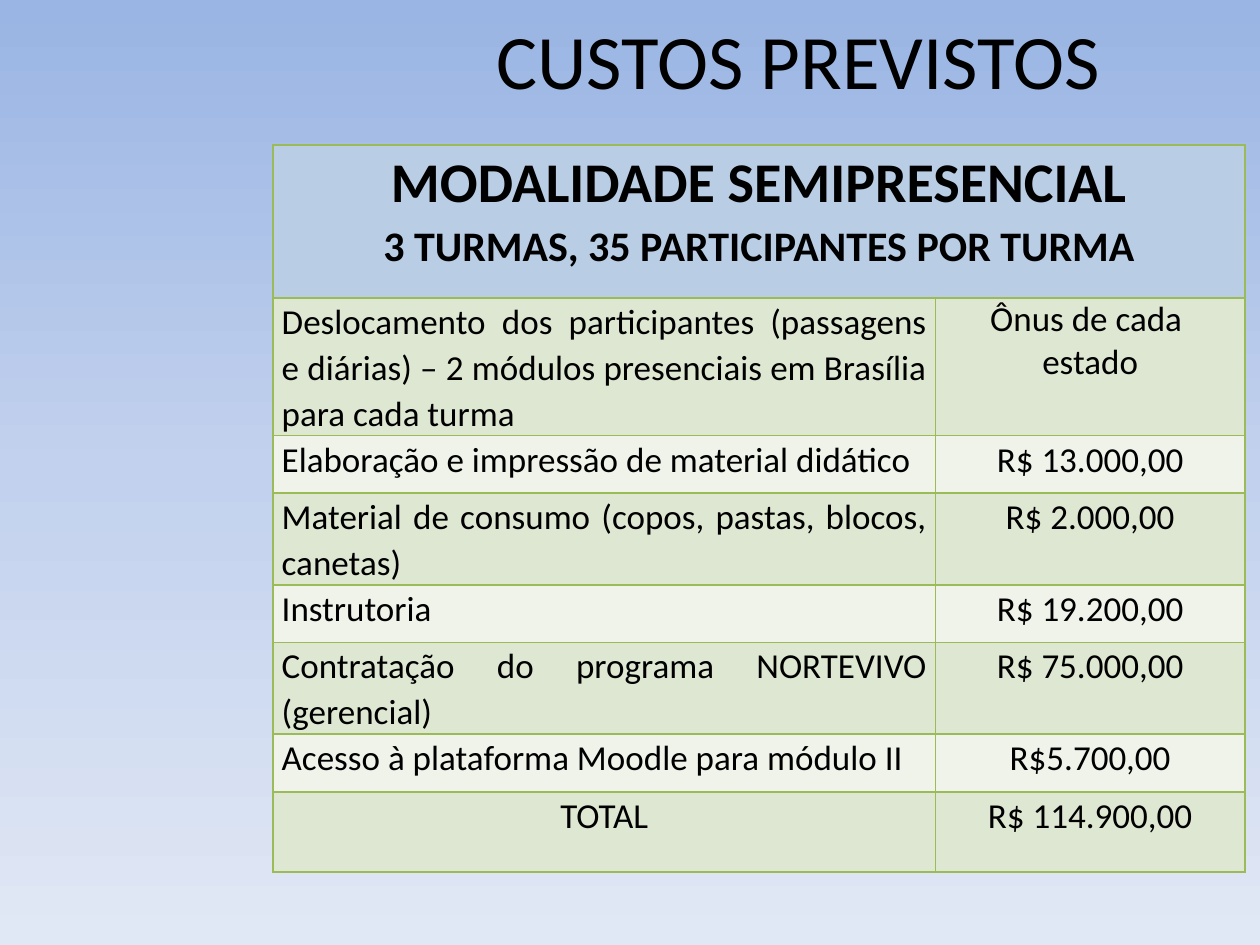
"""Build the slide of expected costs for the blended course."""
import copy
from dataclasses import dataclass

import pptx
import pptx.dml.color
import pptx.enum.text
import pptx.oxml
import pptx.oxml.ns
import pptx.util

Pt = pptx.util.Pt
RGBColor = pptx.dml.color.RGBColor
Align = pptx.enum.text.PP_ALIGN
Anchor = pptx.enum.text.MSO_ANCHOR

FONT = "Calibri"
BLACK = RGBColor(0x00, 0x00, 0x00)
BORDER = RGBColor(0x9B, 0xBB, 0x59)
HEADING = RGBColor(0xB9, 0xCD, 0xE5)
BANDS = (RGBColor(0xDE, 0xE7, 0xD1), RGBColor(0xEF, 0xF3, 0xEA))
BACKDROP = (
    RGBColor(0x9A, 0xB5, 0xE4),
    RGBColor(0xC2, 0xD1, 0xED),
    RGBColor(0xE1, 0xE8, 0xF5),
)
COLUMN_WIDTHS = (378.5, 177)
HEADING_HEIGHT = 87.5


@dataclass
class Cost:
    item: str
    amount: str
    height: float
    item_align: Align = Align.JUSTIFY
    amount_spacing: float = 1.07


COSTS = (
    Cost("Deslocamento dos participantes (passagens e diárias) – 2 módulos "
         "presenciais em Brasília para cada turma",
         "Ônus de cada \nestado", 78.7, amount_spacing=1.0),
    Cost("Elaboração e impressão de material didático", "R$ 13.000,00", 32.9),
    Cost("Material de consumo (copos, pastas, blocos, canetas)", "R$ 2.000,00", 52.4),
    Cost("Instrutoria", "R$ 19.200,00", 32.9),
    Cost("Contratação do programa NORTEVIVO (gerencial)", "R$ 75.000,00", 52.4),
    Cost("Acesso à plataforma Moodle para módulo II", "R$5.700,00", 32.9),
    Cost("TOTAL", "R$ 114.900,00", 45.8, Align.CENTER),
)


def format_text(frame, sizes: tuple, align: Align, spacing: float = 1.0,
                bold: bool = False) -> None:
    """Format each paragraph, with one size per paragraph."""
    for para, size in zip(frame.paragraphs, sizes):
        para.alignment = align
        para.line_spacing = spacing
        for span in para.runs:
            span.font.name = FONT
            span.font.size = Pt(size)
            span.font.bold = bold
            span.font.color.rgb = BLACK


def style_cell(cell, color: RGBColor) -> None:
    """Set the borders, fill and margins of a cell."""
    properties = cell._tc.get_or_add_tcPr()
    for side in "LRTB":
        properties.append(pptx.oxml.parse_xml(
            f'<a:ln{side} {pptx.oxml.ns.nsdecls("a")} w="{Pt(1)}">'
            f'<a:solidFill><a:srgbClr val="{BORDER}"/></a:solidFill></a:ln{side}>'))
    cell.fill.solid()
    cell.fill.fore_color.rgb = color
    cell.margin_left = cell.margin_right = Pt(5)
    cell.margin_top = cell.margin_bottom = Pt(0)


def fill_cell(cell, text: str, sizes: tuple, align: Align, spacing: float,
              bold: bool = False) -> None:
    """Write and format the text of a cell."""
    cell.text_frame.text = text
    format_text(cell.text_frame, sizes, align, spacing, bold)


def paint_background(page) -> None:
    """Give the page a vertical gradient with evenly spaced stops."""
    fill = page.background.fill
    fill.gradient()
    fill.gradient_angle = 270
    stop_list = page.element.xpath(".//p:bg//a:gsLst")[0]
    stop_list.append(copy.deepcopy(stop_list[-1]))
    for index, (stop, color) in enumerate(zip(fill.gradient_stops, BACKDROP)):
        stop.position = index / (len(BACKDROP) - 1)
        stop.color.rgb = color


def add_title(page) -> None:
    """Place and format the title."""
    title = page.shapes.title
    title.left, title.top, title.width, title.height = Pt(201), Pt(3), Pt(510.5), Pt(61)
    title.text_frame.text = "CUSTOS PREVISTOS"
    title.text_frame.vertical_anchor = Anchor.MIDDLE
    format_text(title.text_frame, (44,), Align.CENTER)


def add_costs(page) -> None:
    """Draw the table of costs."""
    heights = (HEADING_HEIGHT, *(cost.height for cost in COSTS))
    table = page.shapes.add_table(
        len(heights), len(COLUMN_WIDTHS), Pt(156), Pt(82.8),
        Pt(sum(COLUMN_WIDTHS)), Pt(sum(heights))).table
    for column, width in zip(table.columns, COLUMN_WIDTHS):
        column.width = Pt(width)
    for index, height in enumerate(heights):
        table.rows[index].height = Pt(height)
        color = BANDS[(index - 1) % 2] if index else HEADING
        for cell in table.rows[index].cells:
            style_cell(cell, color)
    heading = table.cell(0, 0)
    heading.merge(table.cell(0, 1))
    fill_cell(heading, "MODALIDADE SEMIPRESENCIAL\n3 TURMAS, 35 PARTICIPANTES POR TURMA",
              (32, 24), Align.CENTER, 1.07, True)
    for index, cost in enumerate(COSTS, 1):
        fill_cell(table.cell(index, 0), cost.item, (20,), cost.item_align, 1.07)
        fill_cell(table.cell(index, 1), cost.amount, (20, 20), Align.CENTER,
                  cost.amount_spacing)


def main() -> None:
    """Build and save the deck."""
    deck = pptx.Presentation()
    deck.slide_width, deck.slide_height = Pt(720), Pt(540)
    page = deck.slides.add_slide(deck.slide_layouts[5])
    paint_background(page)
    add_title(page)
    add_costs(page)
    deck.save("out.pptx")


if __name__ == "__main__":
    main()
